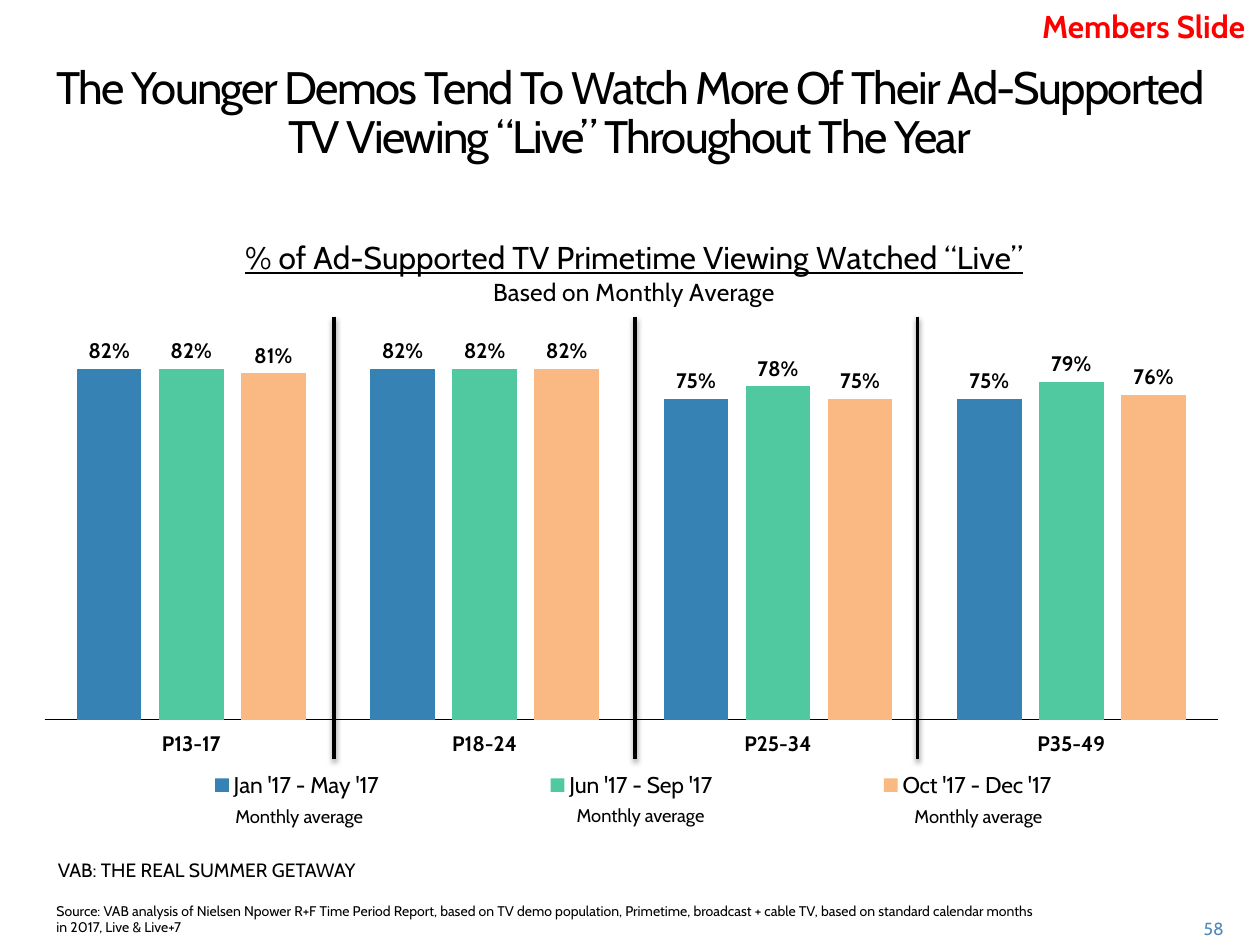
from lxml import etree
from pptx import Presentation
from pptx.chart.data import CategoryChartData
from pptx.dml.color import RGBColor
from pptx.enum.chart import XL_CHART_TYPE, XL_LABEL_POSITION, XL_LEGEND_POSITION, XL_TICK_LABEL_POSITION, XL_TICK_MARK
from pptx.enum.shapes import MSO_CONNECTOR
from pptx.enum.text import MSO_ANCHOR, PP_ALIGN
from pptx.oxml import parse_xml
from pptx.oxml.ns import nsdecls, qn
from pptx.util import Pt

LEFT, CENTER, RIGHT = PP_ALIGN.LEFT, PP_ALIGN.CENTER, PP_ALIGN.RIGHT
TOP, MIDDLE = MSO_ANCHOR.TOP, MSO_ANCHOR.MIDDLE
NO_TICK = XL_TICK_MARK.NONE
rgb = RGBColor.from_string


def style(font, size, color="000000", bold=False):
    font.name, font.size, font.bold = "Cabin", Pt(size), bold
    font.color.rgb = rgb(color)


def place(part, index, **fractions):
    """Give a chart part a manual layout, in fractions of the chart area."""
    for old in part.findall(qn("c:layout")):
        part.remove(old)
    layout = parse_xml(f"<c:layout {nsdecls('c')}><c:manualLayout/></c:layout>")
    for tag, value in fractions.items():
        etree.SubElement(layout[0], qn(f"c:{tag}")).set("val", str(value))
    part.insert(index, layout)


prs = Presentation()
prs.slide_width, prs.slide_height = Pt(720), Pt(540)
slide = prs.slides.add_slide(prs.slide_layouts[6])

# Chart
data = CategoryChartData(number_format="0%")
data.categories = ["P13-17", "P18-24", "P25-34", "P35-49"]
periods = [
    ("Jan '17 - May '17", (0.82, 0.82, 0.75, 0.75), "3682B4"),
    ("Jun '17 - Sep '17", (0.82, 0.82, 0.78, 0.79), "50C8A0"),
    ("Oct '17 - Dec '17", (0.81, 0.82, 0.75, 0.76), "FAB982"),
]
for period, shares, _ in periods:
    data.add_series(period, shares)
chart = slide.shapes.add_chart(
    XL_CHART_TYPE.COLUMN_CLUSTERED, Pt(13), Pt(119.5), Pt(693.5), Pt(346.5), data
).chart
style(chart.font, 10)

heading = chart.chart_title.text_frame
heading.text = "% of Ad-Supported TV Primetime Viewing Watched “Live”\nBased on Monthly Average"
for paragraph, size in zip(heading.paragraphs, (18, 14)):
    style(paragraph.runs[0].font, size)
heading.paragraphs[0].runs[0].font.underline = True

plot = chart.plots[0]
plot.gap_width, plot.overlap, plot.vary_by_categories = 100, -27, False
for series, (_, _, color) in zip(plot.series, periods):
    series.format.fill.solid()
    series.format.fill.fore_color.rgb = rgb(color)
plot.has_data_labels = True
labels = plot.data_labels
labels.show_value = True
labels.number_format, labels.number_format_is_linked = "0%", False
labels.position = XL_LABEL_POSITION.OUTSIDE_END
style(labels.font, 12, bold=True)

demo_axis, share_axis = chart.category_axis, chart.value_axis
demo_axis.major_tick_mark = demo_axis.minor_tick_mark = NO_TICK
demo_axis.tick_label_position = XL_TICK_LABEL_POSITION.LOW
demo_axis.format.line.color.rgb = rgb("000000")
demo_axis.format.line.width = Pt(0.75)
style(demo_axis.tick_labels.font, 12, bold=True)
share_axis.minimum_scale, share_axis.maximum_scale = 0, 1
share_axis.has_major_gridlines = False
share_axis.visible = False

chart.has_legend = True
chart.legend.position = XL_LEGEND_POSITION.BOTTOM
chart.legend.include_in_layout = False
style(chart.legend.font, 13)

place(chart.element.xpath(".//c:plotArea")[0], 0, layoutTarget="inner", xMode="edge",
      yMode="edge", x=0.018, y=0.137, w=0.967, h=0.705)
place(chart.element.xpath("./c:chart/c:title")[0], 1, xMode="edge", yMode="edge", x=0.18, y=0.04)
place(chart.element.xpath(".//c:legend")[0], 1, xMode="edge", yMode="edge",
      x=0.023, y=0.92, w=0.96, h=0.06)

# Dividers between the demos
for x in (190.8, 362.9, 524.2):
    divider = slide.shapes.add_connector(MSO_CONNECTOR.STRAIGHT, Pt(x), Pt(181), Pt(x), Pt(434))
    divider.line.color.rgb = rgb("000000")
    divider.line.width = Pt(2)
    divider.element.spPr.append(parse_xml(
        f"<a:effectLst {nsdecls('a')}>"
        f'<a:outerShdw blurRad="{Pt(3.1)}" dist="{Pt(1.6)}" dir="5400000" rotWithShape="0">'
        '<a:srgbClr val="000000"><a:alpha val="38000"/></a:srgbClr>'
        "</a:outerShdw></a:effectLst>"))

# Texts: text, left, top, width, height, size, colour, bold, alignment, anchor
title = ("The Younger Demos Tend To Watch More Of Their Ad-Supported "
         "TV Viewing “Live” Throughout The Year")
source = ("Source: VAB analysis of Nielsen Npower R+F Time Period Report, based on TV demo population, "
          "Primetime, broadcast + cable TV, based on standard calendar months in 2017, Live & Live+7")
texts = [
    (title, 13, 30, 693.5, 70, 26, "000000", False, CENTER, MIDDLE),
    ("Members Slide", 581, 0.7, 137.5, 29, 18, "FF0000", True, RIGHT, TOP),
    ("VAB: THE REAL SUMMER GETAWAY", 26, 486.7, 188, 34, 11, "000000", False, LEFT, TOP),
    (source, 25.2, 512, 576, 19, 8, "000000", False, LEFT, TOP),
    ("58", 662.4, 521.3, 44, 18, 10, "508ABA", False, RIGHT, MIDDLE),
]
for x, y in ((119.5, 456.5), (314.6, 456), (507.6, 456.5)):
    texts.append(("Monthly average", x, y, 103, 21, 10.5, "000000", False, CENTER, TOP))

for text, left, top, width, height, size, color, bold, align, anchor in texts:
    frame = slide.shapes.add_textbox(Pt(left), Pt(top), Pt(width), Pt(height)).text_frame
    frame.word_wrap = True
    frame.vertical_anchor = anchor
    frame.text = text
    paragraph = frame.paragraphs[0]
    paragraph.alignment = align
    style(paragraph.runs[0].font, size, color, bold)
    if text == title:
        paragraph.line_spacing = Pt(28)
        paragraph.runs[0].font._element.set("spc", "-100")

prs.save("out.pptx")
